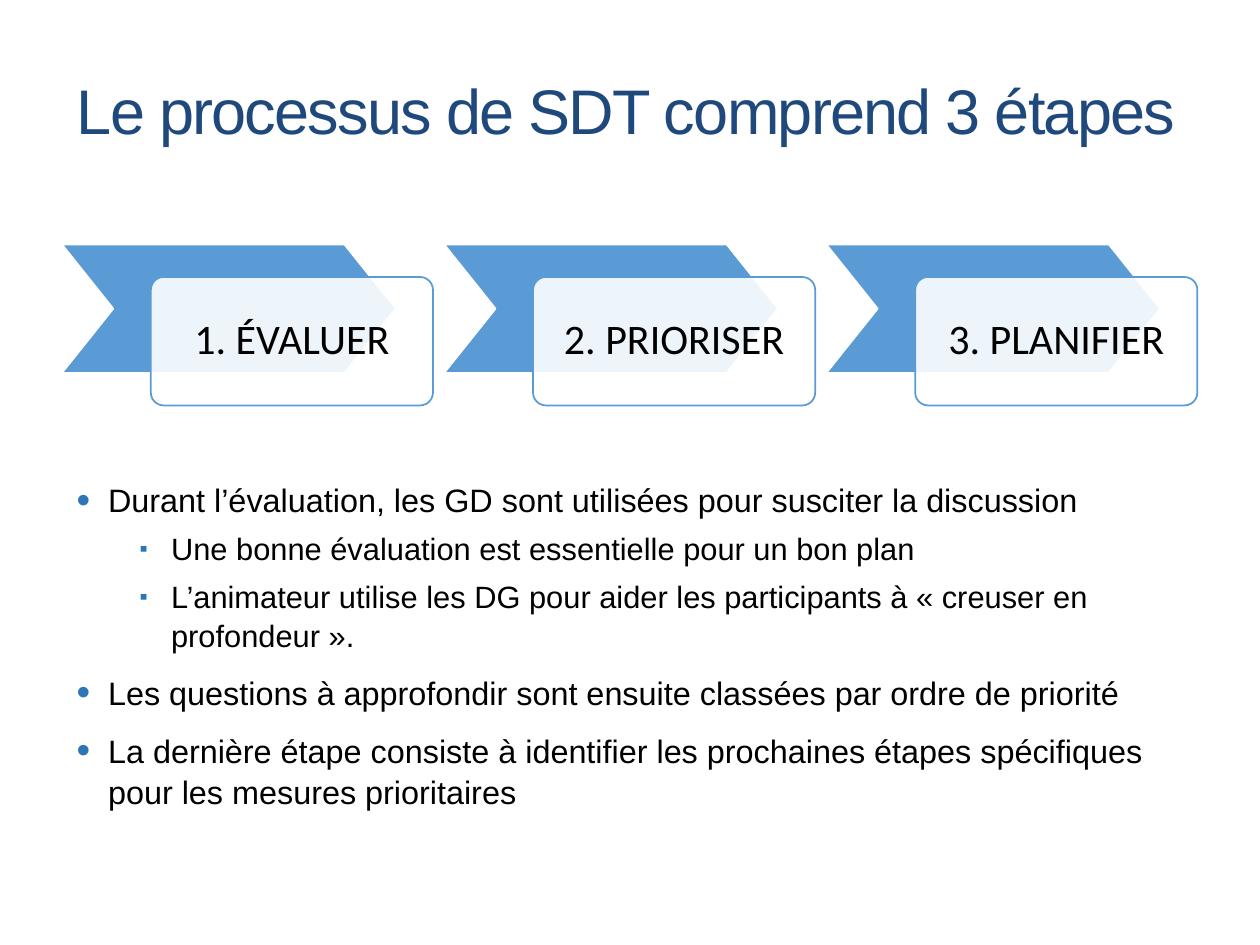
from dataclasses import dataclass

from lxml.etree import SubElement
from pptx import Presentation
from pptx.dml.color import RGBColor
from pptx.enum.shapes import MSO_SHAPE as Preset
from pptx.enum.text import MSO_ANCHOR as Anchor, MSO_AUTO_SIZE as AutoSize, PP_ALIGN as Align
from pptx.oxml.ns import qn
from pptx.util import Pt

COLORS = {
    "title": "1F497D",
    "text": "000000",
    "bullet": "2E75B6",
    "step": "5B9BD5",
    "white": "FFFFFF",
}


@dataclass(frozen=True)
class Level:
    bullet: str
    bullet_percent: int
    size: float
    margin: float
    space_before: float


@dataclass(frozen=True)
class Point:
    text: str
    level: int = 0


LEVELS = [Level("•", 120, 18.5, 18, 10), Level("▪", 75, 17.6, 54, 5)]
HANGING = 18
STEPS = ["1. ÉVALUER", "2. PRIORISER", "3. PLANIFIER"]
STEP_LEFT, STEP_TOP, STEP_PITCH = 35.4, 139.7, 218.4
LABEL_DX, LABEL_DY = 50.8, 18.6
STEP_HEIGHT = 73.4
POINTS = [
    Point("Durant l’évaluation, les GD sont utilisées pour susciter la discussion"),
    Point("Une bonne évaluation est essentielle pour un bon plan", 1),
    Point("L’animateur utilise les DG pour aider les participants à « creuser en profondeur ».", 1),
    Point("Les questions à approfondir sont ensuite classées par ordre de priorité"),
    Point("La dernière étape consiste à identifier les prochaines étapes spécifiques "
          "pour les mesures prioritaires"),
]


def rgb(name: str) -> RGBColor:
    return RGBColor.from_string(COLORS[name])


def apply(target, formats: dict) -> None:
    for attribute, value in formats.items():
        setattr(target, attribute, value)


def write(paragraph, text: str, font: str, size: float, color: str):
    run = paragraph.add_run()
    run.text = text
    apply(run.font, {"name": font, "size": Pt(size)})
    run.font.color.rgb = rgb(color)
    return run


def add_panel(shapes, preset, box: tuple, adjustment: float, fill: str, line: str):
    panel = shapes.add_shape(preset, *map(Pt, box))
    panel.adjustments[0] = adjustment
    panel.shadow.inherit = False
    panel.fill.solid()
    panel.fill.fore_color.rgb = rgb(fill)
    panel.line.color.rgb = rgb(line)
    panel.line.width = Pt(1)
    return panel


def add_step(shapes, index: int, label: str) -> None:
    left = STEP_LEFT + index * STEP_PITCH
    add_panel(shapes, Preset.CHEVRON, (left, STEP_TOP, 190.8, STEP_HEIGHT),
              0.4, "step", "white")
    card = add_panel(shapes, Preset.ROUNDED_RECTANGLE,
                     (left + LABEL_DX, STEP_TOP + LABEL_DY, 161.2, STEP_HEIGHT),
                     0.1, "white", "step")
    # Let the chevron show faintly through the card
    card_color = card.fill._xPr.find(qn("a:solidFill"))[0]
    SubElement(card_color, qn("a:alpha"), val="90000")
    inset = Pt(13.7)
    apply(card.text_frame, {
        "word_wrap": True, "vertical_anchor": Anchor.MIDDLE,
        "margin_left": inset, "margin_right": inset,
        "margin_top": inset, "margin_bottom": inset,
    })
    paragraph = card.text_frame.paragraphs[0]
    apply(paragraph, {"alignment": Align.CENTER, "line_spacing": 0.9})
    write(paragraph, label, "Calibri", 24, "text")


def add_bullet(paragraph, level: Level) -> None:
    properties = paragraph._p.get_or_add_pPr()
    properties.set("marL", str(Pt(level.margin)))
    properties.set("indent", str(-Pt(HANGING)))
    color = SubElement(properties, qn("a:buClr"))
    SubElement(color, qn("a:srgbClr"), val=COLORS["bullet"])
    SubElement(properties, qn("a:buSzPct"), val=str(level.bullet_percent * 1000))
    SubElement(properties, qn("a:buFont"), typeface="Arial")
    SubElement(properties, qn("a:buChar"), char=level.bullet)


def add_points(slide, points: list[Point]) -> None:
    frame = slide.shapes.add_textbox(Pt(36.7), Pt(270), Pt(635.8), Pt(194.4)).text_frame
    frame.word_wrap = True
    for index, point in enumerate(points):
        level = LEVELS[point.level]
        paragraph = frame.add_paragraph() if index else frame.paragraphs[0]
        add_bullet(paragraph, level)
        apply(paragraph, {"level": point.level, "line_spacing": 1.05})
        if index:
            paragraph.space_before = Pt(level.space_before)
        write(paragraph, point.text, "Arial", level.size, "text")


def set_title(slide, text: str) -> None:
    title = slide.shapes.title
    apply(title, {"left": Pt(36.7), "top": Pt(23.8), "width": Pt(648), "height": Pt(77.8)})
    apply(title.text_frame, {"word_wrap": True, "auto_size": AutoSize.NONE,
                             "vertical_anchor": Anchor.MIDDLE})
    paragraph = title.text_frame.paragraphs[0]
    paragraph.alignment = Align.LEFT
    run = write(paragraph, text, "Arial", 36, "title")
    run.font._element.set("spc", "-100")


def main() -> None:
    deck = Presentation()
    apply(deck, {"slide_width": Pt(720), "slide_height": Pt(540)})
    slide = deck.slides.add_slide(deck.slide_layouts[5])

    # Bulleted explanation
    add_points(slide, POINTS)

    # Three-step process
    process = slide.shapes.add_group_shape()
    for index, label in enumerate(STEPS):
        add_step(process.shapes, index, label)

    set_title(slide, "Le processus de SDT comprend 3 étapes")
    deck.save("out.pptx")


if __name__ == "__main__":
    main()
